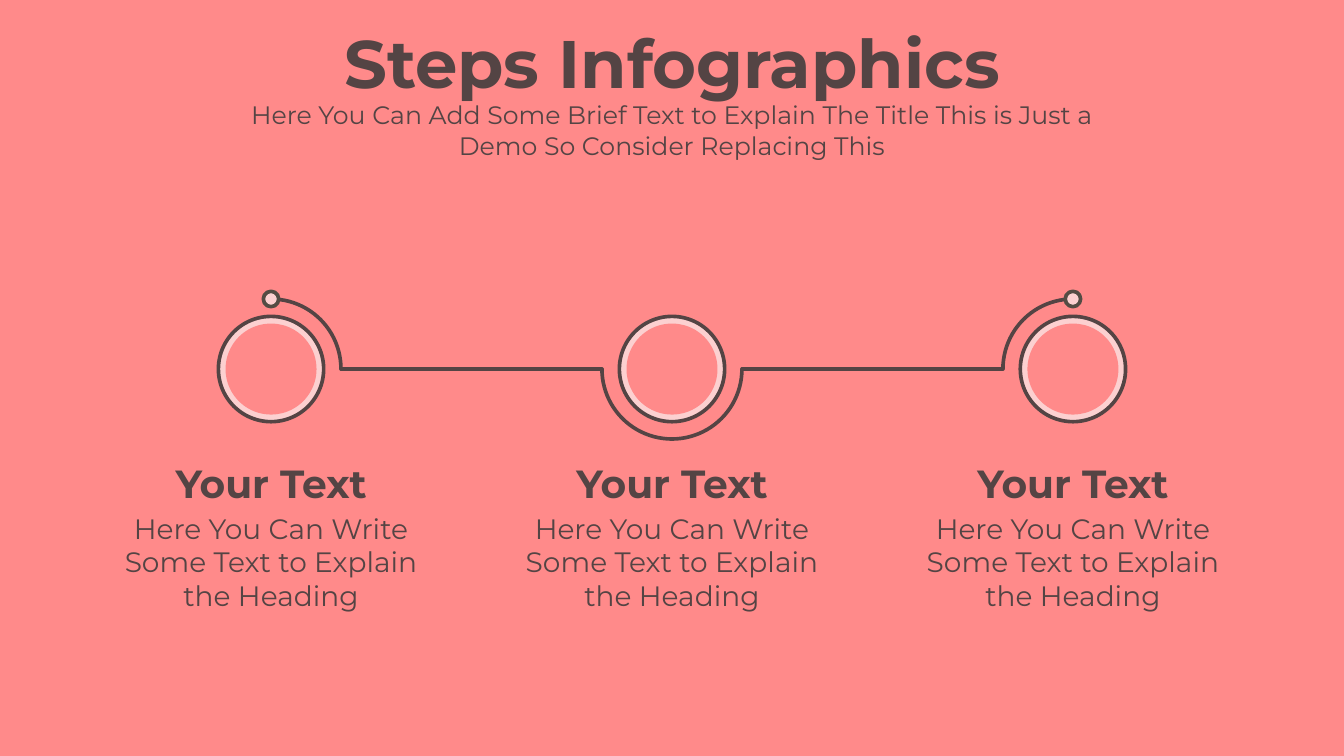
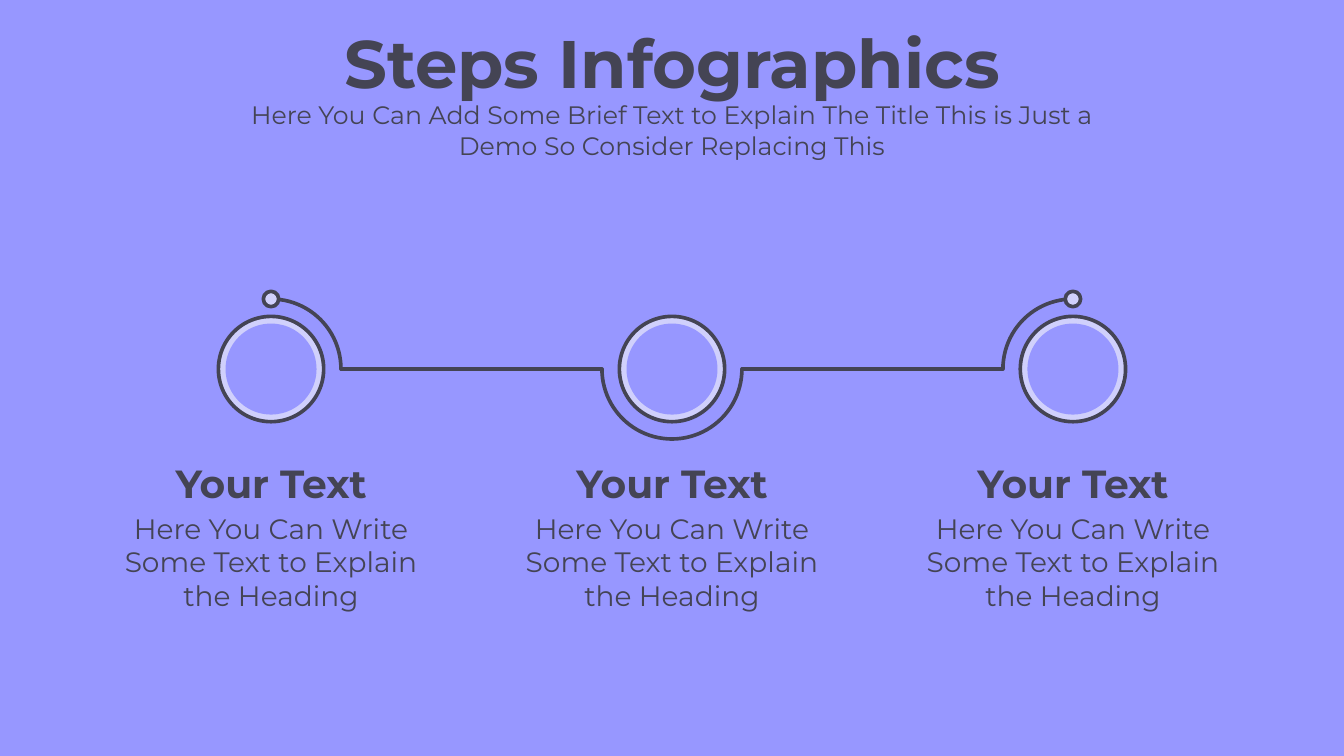
import dataclasses

import lxml.etree
import pptx
import pptx.dml.color
import pptx.enum.shapes
import pptx.enum.text
import pptx.oxml.ns
import pptx.util

Pt = pptx.util.Pt
MSO_SHAPE = pptx.enum.shapes.MSO_SHAPE
qn = pptx.oxml.ns.qn


@dataclasses.dataclass
class Palette:
    background: str
    ink: str
    dot_ink: str
    tint: str


@dataclasses.dataclass
class Theme:
    font: str = "Montserrat"
    title_size: int = 48
    subtitle_size: int = 18
    heading_size: int = 28
    body_size: int = 20
    line_width: float = 2.6
    coral: Palette = dataclasses.field(
        default_factory=lambda: Palette("FF8A8A", "544444", "544C44", "FCD0D0"))
    violet: Palette = dataclasses.field(
        default_factory=lambda: Palette("9797FF", "444454", "444454", "D0D0FC"))


theme = Theme()
rgb = pptx.dml.color.RGBColor.from_string


def write_text(shape, box, text, size, color, bold=False):
    """Place a text shape and fill it with centred text."""
    shape.left, shape.top, shape.width, shape.height = [Pt(length) for length in box]
    frame = shape.text_frame
    frame.word_wrap = True
    frame.auto_size = pptx.enum.text.MSO_AUTO_SIZE.NONE
    frame.vertical_anchor = pptx.enum.text.MSO_ANCHOR.TOP
    frame.text = text
    for paragraph in frame.paragraphs:
        paragraph.alignment = pptx.enum.text.PP_ALIGN.CENTER
        for run in paragraph.runs:
            run.font.name = theme.font
            run.font.size = Pt(size)
            run.font.bold = bold
            run.font.color.rgb = rgb(color)


def add_round(slide, kind, center_x, center_y, radius, fill=None, line=None):
    """Add an ellipse or arc around a centre."""
    shape = slide.shapes.add_shape(
        kind, Pt(center_x - radius), Pt(center_y - radius), Pt(2 * radius), Pt(2 * radius))
    shape.shadow.inherit = False
    if fill:
        shape.fill.solid()
        shape.fill.fore_color.rgb = rgb(fill)
    else:
        shape.fill.background()
    if line:
        shape.line.color.rgb = rgb(line)
        shape.line.width = Pt(theme.line_width)
    else:
        shape.line.fill.background()
    return shape


# Step geometry
slide_width, slide_height = 960, 540
step_gap = 286.4
step_centers = [slide_width / 2 + offset * step_gap for offset in (-1, 0, 1)]
step_y = 263.6
track_radius, ring_radius, face_radius, dot_radius = 50, 37.6, 32.5, 5.5
arc_angles = [(270, 0), (0, 180), (180, 270)]
heading_width, body_width = 198, 238

# Wording
title = "Steps Infographics"
subtitle = ("Here You Can Add Some Brief Text to Explain The Title "
            "This is Just a Demo So Consider Replacing This")
heading = "Your Text"
slide_contents = [
    (theme.coral, "Here You Can Write Some Text to Explain\nthe Heading"),
    (theme.violet, "Here You Can Write\nSome Text to Explain\nthe Heading"),
]

presentation = pptx.Presentation()
presentation.slide_width = Pt(slide_width)
presentation.slide_height = Pt(slide_height)
title_only = presentation.slide_layouts.get_by_name("Title Only")

for palette, body in slide_contents:
    slide = presentation.slides.add_slide(title_only)
    slide.background.fill.solid()
    slide.background.fill.fore_color.rgb = rgb(palette.background)

    # Title and subtitle
    write_text(slide.shapes.title, (200, 11.5, 560, 66), title,
               theme.title_size, palette.ink, bold=True)
    write_text(slide.shapes.add_textbox(0, 0, 0, 0), (165.7, 67.7, 628.6, 51), subtitle,
               theme.subtitle_size, palette.ink)

    # Track: an arc around each step, joined by straight lines
    for center, (start, end) in zip(step_centers, arc_angles):
        arc = add_round(slide, MSO_SHAPE.ARC, center, step_y, track_radius, line=palette.ink)
        # Arc angles are 60000ths of a degree; adjustments count in 100000ths
        arc.adjustments[0] = start * 0.6
        arc.adjustments[1] = end * 0.6
        arc.element.spPr.find(qn("a:ln")).set("cap", "rnd")
    for left, right in zip(step_centers, step_centers[1:]):
        connector = slide.shapes.add_connector(
            pptx.enum.shapes.MSO_CONNECTOR.STRAIGHT,
            Pt(left + track_radius), Pt(step_y), Pt(right - track_radius), Pt(step_y))
        connector.line.color.rgb = rgb(palette.ink)
        connector.line.width = Pt(theme.line_width)
        connector.element.spPr.find(qn("a:ln")).set("cap", "rnd")
        lxml.etree.SubElement(connector.element.spPr, qn("a:effectLst"))

    # Steps: ring, face, heading and body
    for center in step_centers:
        add_round(slide, MSO_SHAPE.OVAL, center, step_y, ring_radius,
                  palette.tint, palette.ink)
        add_round(slide, MSO_SHAPE.OVAL, center, step_y, face_radius, palette.background)
        write_text(slide.shapes.add_textbox(0, 0, 0, 0),
                   (center - heading_width / 2, 324.7, heading_width, 41),
                   heading, theme.heading_size, palette.ink, bold=True)
        write_text(slide.shapes.add_textbox(0, 0, 0, 0),
                   (center - body_width / 2, 361.5, body_width, 80),
                   body, theme.body_size, palette.ink)

    # Dots at both ends of the track
    for center in (step_centers[0], step_centers[-1]):
        add_round(slide, MSO_SHAPE.OVAL, center, step_y - track_radius, dot_radius,
                  palette.tint, palette.dot_ink)

presentation.save("out.pptx")
